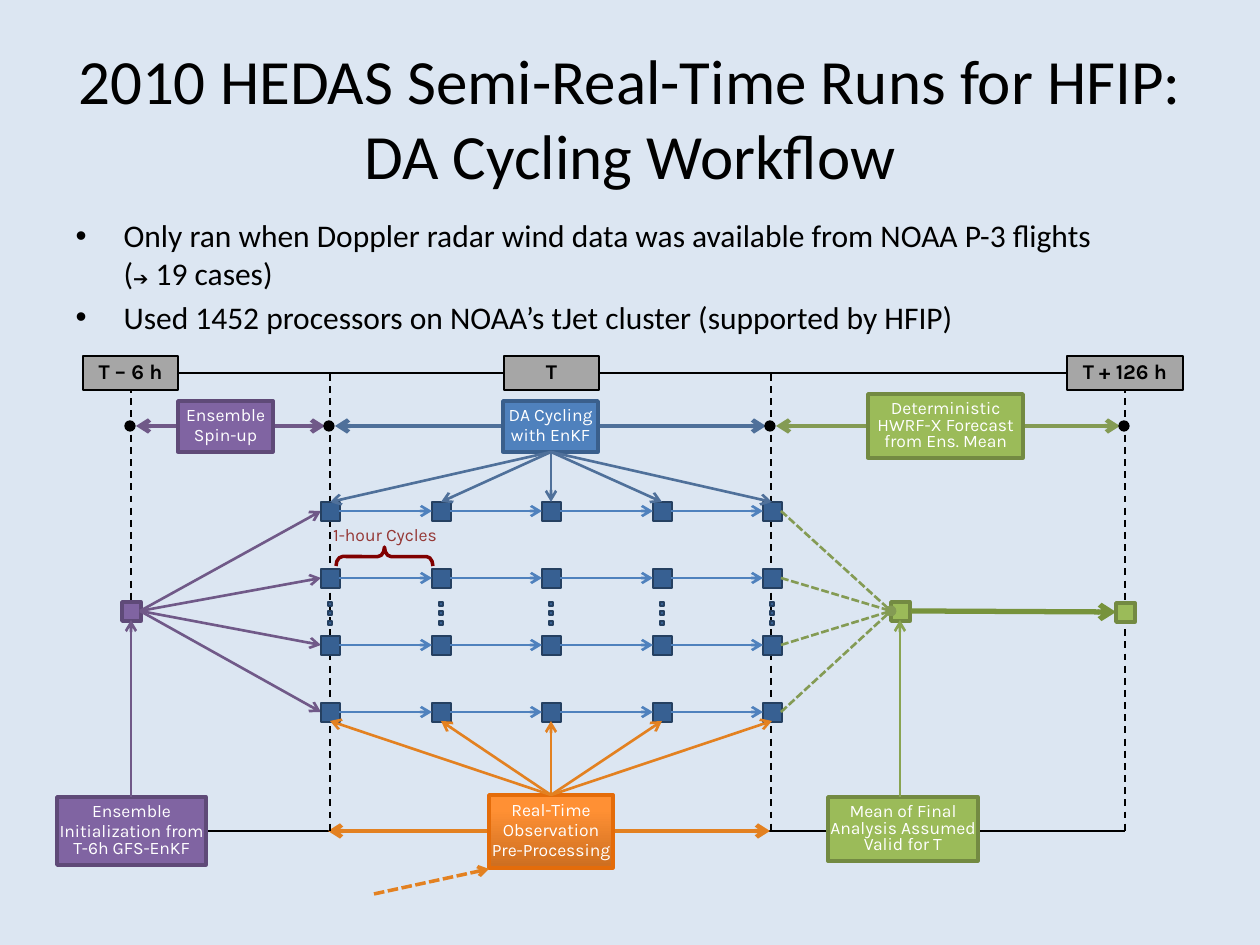
from lxml.etree import SubElement
from pptx import Presentation
from pptx.dml.color import RGBColor
from pptx.enum.dml import MSO_LINE_DASH_STYLE as Dash
from pptx.enum.shapes import MSO_CONNECTOR, MSO_SHAPE as Shape
from pptx.enum.text import MSO_ANCHOR as Anchor, MSO_AUTO_SIZE as AutoSize, PP_ALIGN as Align
from pptx.oxml.ns import qn
from pptx.util import Emu, Pt

BLACK = RGBColor(0x00, 0x00, 0x00)
WHITE = RGBColor(0xFF, 0xFF, 0xFF)
BACKGROUND = RGBColor(0xDC, 0xE6, 0xF2)
GREY = RGBColor(0xA6, 0xA6, 0xA6)
PURPLE = RGBColor(0x80, 0x64, 0xA2)
PURPLE_EDGE = RGBColor(0x5F, 0x4A, 0x78)
PURPLE_LINE = RGBColor(0x70, 0x59, 0x88)
BLUE = RGBColor(0x4F, 0x81, 0xBD)
BLUE_EDGE = RGBColor(0x3A, 0x5F, 0x8C)
BLUE_LINE = RGBColor(0x4F, 0x70, 0x9A)
NODE_BLUE = RGBColor(0x37, 0x60, 0x92)
NODE_EDGE = RGBColor(0x25, 0x40, 0x61)
GREEN = RGBColor(0x9B, 0xBB, 0x59)
GREEN_EDGE = RGBColor(0x73, 0x8A, 0x42)
GREEN_LINE = RGBColor(0x84, 0x9B, 0x54)
GREEN_DARK = RGBColor(0x77, 0x93, 0x3C)
GREEN_LIGHT = RGBColor(0x89, 0xA4, 0x51)
ORANGE_DARK = RGBColor(0xCC, 0x6E, 0x20)
ORANGE_LIGHT = RGBColor(0xFF, 0x90, 0x34)
ORANGE_EDGE = RGBColor(0xE4, 0x6C, 0x0A)
ORANGE_LINE = RGBColor(0xE3, 0x81, 0x21)
MAROON = RGBColor(0x80, 0x00, 0x00)
RED_TEXT = RGBColor(0x95, 0x37, 0x35)

COLUMNS = (330, 441, 551, 662, 772)
ROWS = (511, 578, 645, 712)
TIMES = (131, 330, 771, 1125)
NODE = 19
HALF = 9
MIDDLE = 611
MEAN_X = 900


def px(count):
    return Emu(round(count * 914400 / 126))


def place(item, left, top, width, height):
    item.left, item.top = px(left), px(top)
    item.width, item.height = px(width), px(height)


def style_span(span, size, color, font="Calibri", bold=False):
    span.font.name = font
    span.font.size = Pt(size)
    span.font.bold = bold
    span.font.color.rgb = color


def size_breaks(para, size):
    """Give line breaks the text size, so that they do not stretch their line."""
    for line_break in para._p.findall(qn("a:br")):
        SubElement(line_break, qn("a:rPr")).set("sz", str(size * 100))


def write_title(page):
    title = page.shapes.title
    place(title, 63, 38, 1134, 158)
    frame = title.text_frame
    frame.text = "2010 HEDAS Semi-Real-Time Runs for HFIP:\vDA Cycling Workflow"
    frame.vertical_anchor = Anchor.MIDDLE
    frame.auto_size = AutoSize.NONE
    para = frame.paragraphs[0]
    para.alignment = Align.CENTER
    for span in para.runs:
        style_span(span, 36, BLACK)
    size_breaks(para, 36)


def write_bullets(page):
    body = page.placeholders[1]
    place(body, 63, 210, 1134, 624)
    frame = body.text_frame
    frame.auto_size = AutoSize.NONE
    first, second = frame.paragraphs[0], frame.add_paragraph()
    first.text = "Only ran when Doppler radar wind data was available from NOAA P-3 flights\v("
    arrow = first.add_run()
    arrow.text = "➔"
    first.add_run().text = " 19 cases)"
    second.text = "Used 1452 processors on NOAA’s tJet cluster (supported by HFIP)"
    for para in frame.paragraphs:
        properties = para._p.get_or_add_pPr()
        properties.set("marL", str(px(48)))
        properties.set("indent", str(-px(48)))
        for span in para.runs:
            style_span(span, 18, BLACK)
        size_breaks(para, 18)
    style_span(arrow, 10.5, BLACK, "Arial")


def add_line(page, start, end, color, width, dash=None, head=None, tail=None):
    line = page.shapes.add_connector(MSO_CONNECTOR.STRAIGHT, *map(px, (*start, *end)))
    line.line.color.rgb = color
    line.line.width = Pt(width)
    if dash:
        line.line.dash_style = dash
    outline = line.line._get_or_add_ln()
    for tag, kind in (("a:headEnd", head), ("a:tailEnd", tail)):
        if kind:
            SubElement(outline, qn(tag)).set("type", kind)
    SubElement(line._element.spPr, qn("a:effectLst"))


def add_fan(page, starts, ends, color, dash=None, tail="arrow"):
    for start in starts:
        for end in ends:
            add_line(page, start, end, color, 1.5, dash, tail=tail)


def add_figure(page, kind, bounds, fill, edge, width):
    figure = page.shapes.add_shape(kind, *map(px, bounds))
    figure.shadow.inherit = False
    if fill is None:
        figure.fill.background()
    else:
        figure.fill.solid()
        figure.fill.fore_color.rgb = fill
    figure.line.color.rgb = edge
    figure.line.width = Pt(width)
    return figure


def add_node(page, x, y, fill=NODE_BLUE, edge=NODE_EDGE, width=0.75):
    add_figure(page, Shape.RECTANGLE, (x - HALF, y - HALF, NODE, NODE), fill, edge, width)


def write_label(box, text, size=10, color=WHITE, bold=False):
    frame = box.text_frame
    frame.text = text
    frame.word_wrap = True
    frame.vertical_anchor = Anchor.MIDDLE
    frame.margin_left = frame.margin_right = 0
    frame.margin_top = frame.margin_bottom = px(6)
    for para in frame.paragraphs:
        para.alignment = Align.CENTER
        para.line_spacing = 0.8
        para.space_before = Pt(size * 0.2)
        for span in para.runs:
            style_span(span, size, color, "Karla", bold)


def add_stage(page, bounds, text, fill, edge):
    box = add_figure(page, Shape.RECTANGLE, bounds, fill, edge, 2)
    write_label(box, text)
    return box


def draw_guides(page):
    add_line(page, (131, 831), (1125, 831), BLACK, 1)
    add_line(page, (328, 831), (770, 831), ORANGE_LINE, 2.5, head="arrow", tail="arrow")
    for x in TIMES:
        add_line(page, (x, 374), (x, 831), BLACK, 1, Dash.DASH)


def draw_ensemble(page):
    right_edge = COLUMNS[-1] + HALF
    add_node(page, TIMES[0], MIDDLE, PURPLE, PURPLE_EDGE, 2)
    add_fan(page, [(140, MIDDLE)], [(COLUMNS[0] - HALF, y) for y in ROWS], PURPLE_LINE)
    for y in ROWS:
        for x in COLUMNS:
            add_node(page, x, y)
        for left, right in zip(COLUMNS, COLUMNS[1:]):
            add_line(page, (left + HALF, y), (right - HALF, y), BLUE, 1.5, tail="arrow")
    for x in COLUMNS:
        for y in (602, 611, 621):
            add_figure(page, Shape.RECTANGLE, (x - 2, y, 4, 4), NODE_BLUE, NODE_EDGE, 0.75)
    add_node(page, MEAN_X, MIDDLE, GREEN, GREEN_EDGE, 2)
    add_fan(page, [(right_edge, y) for y in ROWS], [(MEAN_X - HALF, MIDDLE)],
            GREEN_LINE, Dash.SQUARE_DOT, "oval")
    add_line(page, (911, 611), (1116, 612), GREEN_DARK, 3, tail="arrow")
    add_node(page, TIMES[-1], 612, GREEN, GREEN_EDGE, 2)


def draw_timeline(page):
    for left, right in ((178, 504), (599, 1067)):
        add_line(page, (left, 373), (right, 373), BLACK, 1)
    for left, width, text in ((83, 95, "T – 6 h"), (504, 95, "T"), (1067, 116, "T + 126 h")):
        box = add_figure(page, Shape.RECTANGLE, (left, 356, width, 34), GREY, BLACK, 0.75)
        write_label(box, text, 12, BLACK, True)
    colors = (PURPLE_LINE, BLUE_LINE, GREEN_LINE)
    for left, right, color in zip(TIMES, TIMES[1:], colors):
        add_line(page, (left + 5, 426), (right - 5, 426), color, 2.5, head="arrow", tail="arrow")
    add_stage(page, (178, 401, 95, 51), "Ensemble\nSpin-up", PURPLE, PURPLE_EDGE)
    add_stage(page, (503, 401, 95, 51), "DA Cycling\nwith EnKF", BLUE, BLUE_EDGE)
    add_stage(page, (868, 394, 155, 64), "Deterministic HWRF-X Forecast from Ens. Mean",
              GREEN, GREEN_EDGE)
    for x in TIMES:
        add_figure(page, Shape.OVAL, (x - 6, 421, 10, 10), BLACK, BLACK, 0.75)


def draw_inputs(page):
    observation = add_stage(page, (489, 795, 124, 73), "Real-Time\nObservation\nPre-Processing",
                            ORANGE_DARK, ORANGE_EDGE)
    observation.fill.gradient()
    observation.fill.gradient_angle = 90
    dark, light = observation.fill.gradient_stops
    dark.color.rgb, dark.position = ORANGE_DARK, 0
    light.color.rgb, light.position = ORANGE_LIGHT, 0.8
    add_line(page, (374, 894), (489, 869), ORANGE_LINE, 2, Dash.SQUARE_DOT, tail="arrow")
    add_fan(page, [(551, 795)], [(x, ROWS[-1] + HALF) for x in COLUMNS], ORANGE_LINE)
    add_stage(page, (57, 797, 149, 68), "Ensemble\nInitialization from T-6h GFS-EnKF",
              PURPLE, PURPLE_EDGE)
    add_line(page, (131, 797), (131, 620), PURPLE_LINE, 1.5, tail="arrow")
    add_stage(page, (828, 797, 150, 64), "Mean of Final Analysis Assumed Valid for T",
              GREEN, GREEN_EDGE)
    add_line(page, (MEAN_X, 797), (MEAN_X, 620), GREEN_LIGHT, 1.5, tail="arrow")


def draw_cycles(page):
    brace = add_figure(page, Shape.RIGHT_BRACE, (375, 508, 19, 97), None, MAROON, 2)
    brace.rotation = 270
    brace.adjustments[0] = 0.34
    label = page.shapes.add_textbox(*map(px, (329, 521, 112, 30)))
    write_label(label, "1-hour Cycles", color=RED_TEXT)
    add_fan(page, [(551, 452)], [(x, ROWS[0] - HALF) for x in COLUMNS], BLUE_LINE)


def main():
    deck = Presentation()
    deck.slide_width, deck.slide_height = px(1260), px(945)
    page = deck.slides.add_slide(deck.slide_layouts[1])
    page.background.fill.solid()
    page.background.fill.fore_color.rgb = BACKGROUND
    write_title(page)
    write_bullets(page)
    draw_guides(page)
    draw_ensemble(page)
    draw_timeline(page)
    draw_inputs(page)
    draw_cycles(page)
    deck.save("out.pptx")


if __name__ == "__main__":
    main()
